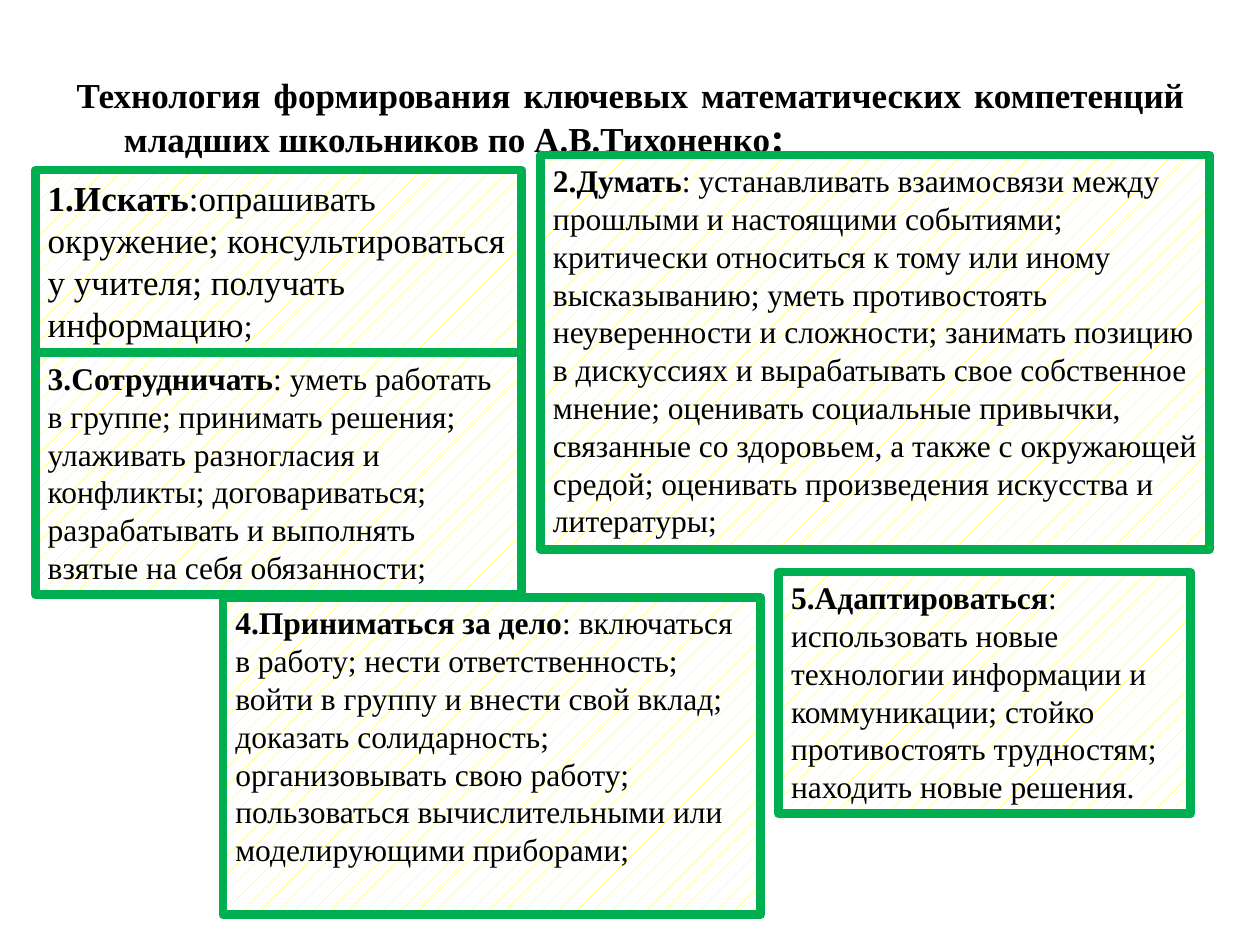
from dataclasses import dataclass

from pptx import Presentation
from pptx.dml.color import RGBColor
from pptx.enum.dml import MSO_PATTERN
from pptx.enum.shapes import MSO_SHAPE
from pptx.enum.text import MSO_ANCHOR, PP_ALIGN
from pptx.util import Pt


@dataclass(frozen=True)
class Theme:
    ink: RGBColor = RGBColor(0, 0, 0)
    paper: RGBColor = RGBColor(255, 255, 255)
    dots: RGBColor = RGBColor(255, 255, 0)
    edge: RGBColor = RGBColor(0, 176, 80)
    font: str = "Times New Roman"
    small: int = 18
    large: int = 20
    colon: int = 24
    border: int = 5


THEME = Theme()

LEFT, WIDTH = 20.2, 277.9
CARDS = [
    ((LEFT, 97.2, WIDTH, 104.4), THEME.large, "1.Искать",
     ":опрашивать окружение; консультироваться у учителя; "
     "получать информацию", ";"),
    ((308.9, 88.6, 382.3, 225.4), THEME.small, "2.Думать",
     ": устанавливать взаимосвязи между прошлыми и настоящими событиями; "
     "критически относиться к тому или иному высказыванию; уметь "
     "противостоять неуверенности и сложности; занимать позицию в "
     "дискуссиях и вырабатывать свое собственное мнение; оценивать "
     "социальные привычки, связанные со здоровьем, а также с окружающей "
     "средой; оценивать произведения искусства и литературы", ";"),
    ((LEFT, 201.6, WIDTH, 138.2), THEME.small, "3.Сотрудничать",
     ": уметь работать в группе; принимать решения; улаживать разногласия "
     "и конфликты; договариваться; разрабатывать и выполнять взятые на "
     "себя обязанности", ";"),
    ((127.4, 341.3, 307.4, 181.4), THEME.small, "4.Приниматься за дело",
     ": включаться в работу; нести ответственность; войти в группу и "
     "внести свой вклад; доказать солидарность; организовывать свою "
     "работу; пользоваться вычислительными или моделирующими приборами", ";"),
    ((445, 326.9, 235.4, 138.2), THEME.small, "5.Адаптироваться",
     ": использовать новые технологии информации и коммуникации; стойко "
     "противостоять трудностям; находить новые решения", "."),
]


def write(para, text, size=THEME.small, bold=False):
    run = para.add_run()
    run.text = text
    font = run.font
    font.name = THEME.font
    font.size = Pt(size)
    font.bold = bold
    font.color.rgb = THEME.ink


def frame(shape):
    body = shape.text_frame
    body.word_wrap = True
    body.vertical_anchor = MSO_ANCHOR.TOP
    return body.paragraphs[0]


def add_title(slide, box):
    para = frame(slide.shapes.add_textbox(*map(Pt, box)))
    para.alignment = PP_ALIGN.JUSTIFY
    para.line_spacing = 0.9
    props = para._p.get_or_add_pPr()
    props.set("marL", str(Pt(27)))
    props.set("indent", str(Pt(-27)))
    write(para, "Технология формирования ключевых математических компетенций "
          "младших школьников по А.В.Тихоненко", size=THEME.large, bold=True)
    write(para, ":", size=THEME.colon, bold=True)


def add_card(slide, box, size, head, text, end):
    card = slide.shapes.add_shape(MSO_SHAPE.RECTANGLE, *map(Pt, box))
    card.shadow.inherit = False
    card.fill.patterned()
    card.fill.pattern = MSO_PATTERN.PERCENT_5
    card.fill.fore_color.rgb = THEME.dots
    card.fill.back_color.rgb = THEME.paper
    card.line.color.rgb = THEME.edge
    card.line.width = Pt(THEME.border)
    para = frame(card)
    para.alignment = PP_ALIGN.LEFT
    write(para, head, size=size, bold=True)
    write(para, text, size=size)
    write(para, end)


def main():
    deck = Presentation()
    deck.slide_width, deck.slide_height = Pt(720), Pt(540)
    slide = deck.slides.add_slide(deck.slide_layouts[6])
    add_title(slide, (36.7, 41, 647.3, 70))
    for card in CARDS:
        add_card(slide, *card)
    deck.save("out.pptx")


if __name__ == "__main__":
    main()
